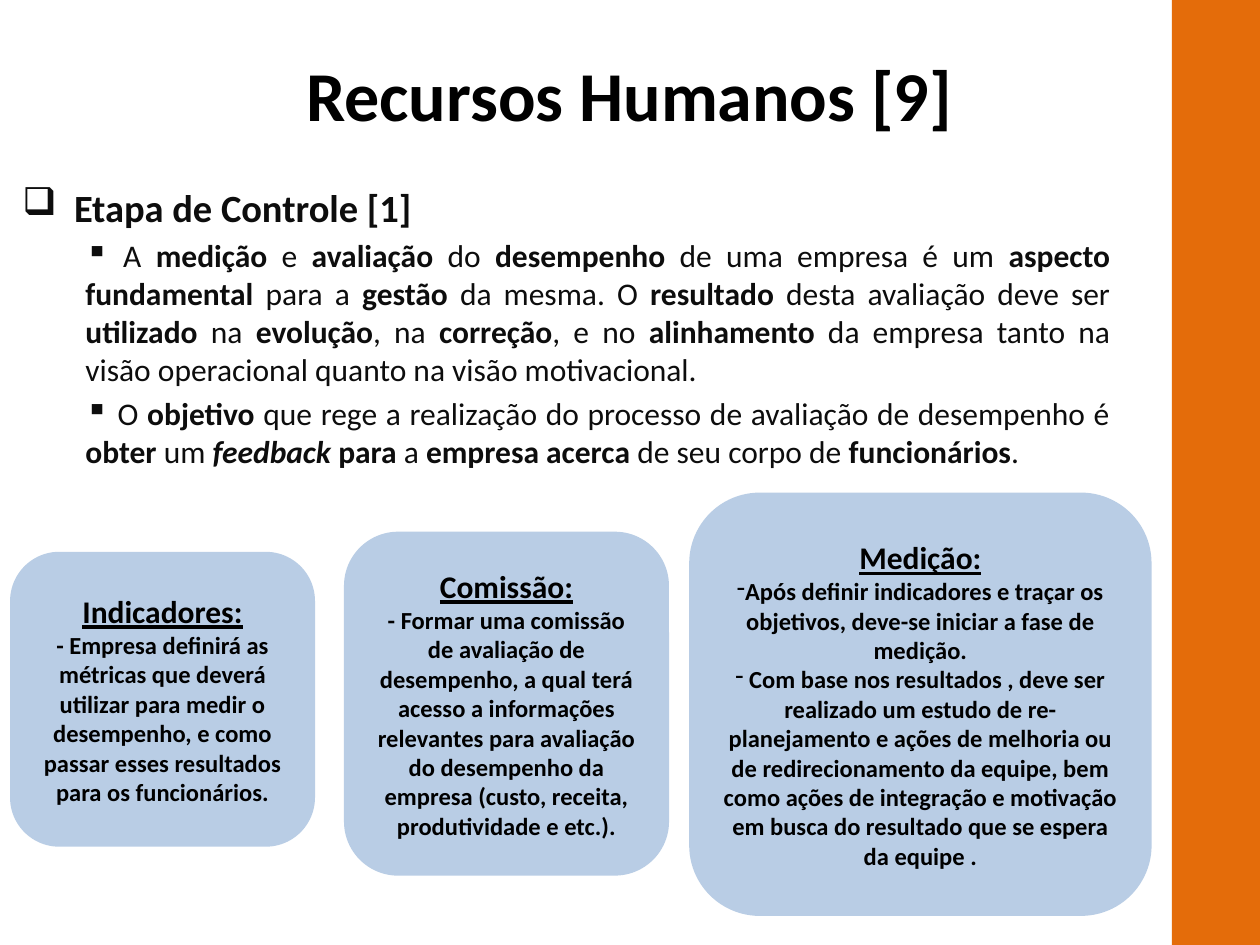
from dataclasses import dataclass

from lxml import etree
from pptx import Presentation
from pptx import util as u
from pptx.dml.color import RGBColor
from pptx.enum import shapes, text
from pptx.oxml.ns import qn


@dataclass(frozen=True)
class Theme:
    face: str = "Calibri"
    black: str = "000000"
    ink: str = "0D0D0D"
    orange: str = "E46C0A"
    blue: str = "B9CDE5"
    title: int = 40
    heading: int = 22
    body: int = 18
    detail: int = 14


THEME = Theme()

STATEMENTS = [
    " A *medição* e *avaliação* do *desempenho* de uma empresa é um "
    "*aspecto fundamental* para a *gestão* da mesma. O *resultado* desta "
    "avaliação deve ser *utilizado* na *evolução*, na *correção*, e no "
    "*alinhamento* da empresa tanto na visão operacional quanto na visão "
    "motivacional.",
    " O *objetivo* que rege a realização do processo de avaliação de "
    "desempenho é *obter* um *_feedback _para* a *empresa acerca* de seu "
    "corpo de *funcionários*.",
]

STAGES = [
    ((0.08, 4.38, 2.42, 2.34), "Indicadores:", None, [
        "- Empresa definirá as métricas que deverá utilizar para medir o "
        "desempenho, e como passar esses resultados para os funcionários.",
    ]),
    ((2.73, 4.22, 2.58, 2.73), "Comissão:", None, [
        "- Formar uma comissão de avaliação de desempenho, a qual terá acesso "
        "a informações relevantes para avaliação do desempenho da empresa "
        "(custo, receita, produtividade e etc.).",
    ]),
    ((5.47, 3.91, 3.67, 3.36), "Medição:", "-", [
        "Após definir indicadores e traçar os objetivos, deve-se iniciar a "
        "fase de medição.",
        " Com base nos resultados , deve ser realizado um estudo de "
        "re-planejamento e ações de melhoria ou de redirecionamento da "
        "equipe, bem como ações de integração e motivação em busca do "
        "resultado que se espera da equipe .",
    ]),
]


def inches(box):
    return [u.Inches(length) for length in box]


def add_run(paragraph, wording, size, color, **style):
    run = paragraph.add_run()
    run.text = wording
    formats = {"name": THEME.face, "size": u.Pt(size), **style}
    for name, value in formats.items():
        setattr(run.font, name, value)
    run.font.color.rgb = RGBColor.from_string(color)


def add_marked_runs(paragraph, marked, size, color):
    for i, weighted in enumerate(marked.split("*")):
        for j, wording in enumerate(weighted.split("_")):
            if wording:
                add_run(paragraph, wording, size, color,
                        bold=i % 2 == 1, italic=j % 2 == 1)


def set_bullet(paragraph, mark, margin=0, indent=0):
    properties = paragraph._p.get_or_add_pPr()
    properties.set("marL", str(u.Inches(margin)))
    properties.set("indent", str(u.Inches(indent)))
    etree.SubElement(properties, qn("a:buChar")).set("char", mark)


def add_text_area(slide, box, anchor):
    frame = slide.shapes.add_textbox(*inches(box)).text_frame
    frame.word_wrap = True
    frame.vertical_anchor = anchor
    return frame


def add_block(slide, preset, box, color):
    block = slide.shapes.add_shape(preset, *inches(box))
    block.shadow.inherit = False
    block.fill.solid()
    block.fill.fore_color.rgb = RGBColor.from_string(color)
    block.line.fill.background()
    return block


def add_title(slide):
    frame = add_text_area(slide, (0.23, 0.16, 9.53, 1.17), text.MSO_ANCHOR.MIDDLE)
    title = frame.paragraphs[0]
    title.alignment = text.PP_ALIGN.CENTER
    add_run(title, "Recursos Humanos [9]", THEME.title, THEME.black, bold=True)


def add_control_step(slide):
    frame = add_text_area(slide, (0.08, 1.41, 8.83, 5.94), text.MSO_ANCHOR.TOP)
    heading = frame.paragraphs[0]
    heading.alignment = text.PP_ALIGN.JUSTIFY
    set_bullet(heading, "❑", 0.41, -0.41)
    add_run(heading, "Etapa de Controle [1]", THEME.heading, THEME.ink, bold=True)
    for marked in STATEMENTS:
        statement = frame.add_paragraph()
        statement.level = 1
        statement.alignment = text.PP_ALIGN.JUSTIFY
        statement.space_before = u.Pt(THEME.body * 0.2)
        set_bullet(statement, "▪", 0.5)
        add_marked_runs(statement, marked, THEME.body, THEME.ink)


def add_stage(slide, box, name, mark, details):
    stage = add_block(slide, shapes.MSO_SHAPE.ROUNDED_RECTANGLE, box, THEME.blue)
    frame = stage.text_frame
    frame.word_wrap = True
    frame.vertical_anchor = text.MSO_ANCHOR.MIDDLE
    heading = frame.paragraphs[0]
    heading.alignment = text.PP_ALIGN.CENTER
    add_run(heading, name, THEME.body, THEME.black, bold=True, underline=True)
    for wording in details:
        detail = frame.add_paragraph()
        detail.alignment = text.PP_ALIGN.CENTER
        if mark:
            set_bullet(detail, mark)
        add_run(detail, wording, THEME.detail, THEME.black, bold=True)


def main():
    deck = Presentation()
    deck.slide_width, deck.slide_height = u.Inches(10), u.Inches(7.5)
    slide = deck.slides.add_slide(deck.slide_layouts[6])
    add_title(slide)
    add_control_step(slide)
    add_block(slide, shapes.MSO_SHAPE.RECTANGLE, (9.3, 0, 0.7, 7.5), THEME.orange)
    for stage in STAGES:
        add_stage(slide, *stage)
    deck.save("out.pptx")


if __name__ == "__main__":
    main()
